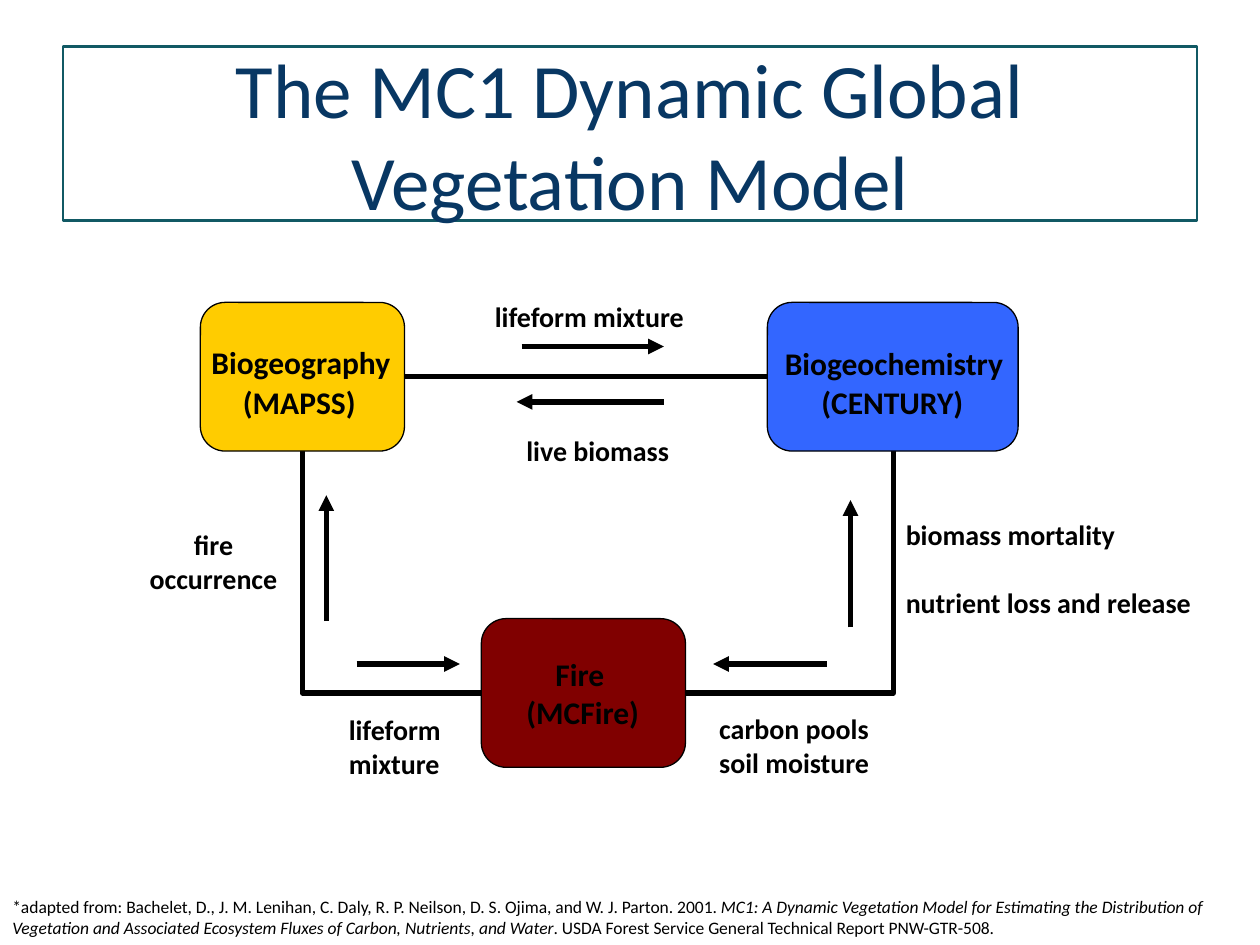
"""Build the MC1 Dynamic Global Vegetation Model slide on a grid of 100 columns by 75 rows."""
from dataclasses import dataclass
from typing import NamedTuple

import pptx
import pptx.dml.color
import pptx.enum.shapes
import pptx.enum.text
import pptx.oxml.ns
import pptx.util
from lxml import etree

ALIGN = pptx.enum.text.PP_ALIGN
SHAPE = pptx.enum.shapes.MSO_SHAPE
CONNECTOR = pptx.enum.shapes.MSO_CONNECTOR


@dataclass(frozen=True)
class Theme:
    font: str = "Calibri"
    ink: str = "000000"
    title_ink: str = "083763"
    title_line: str = "115964"
    yellow: str = "FFCC00"
    blue: str = "3366FF"
    maroon: str = "800000"
    title_size: float = 44
    node_size: float = 18
    label_size: float = 16
    note_size: float = 10
    link_width: float = 3
    node_line: float = 0.75
    title_width: float = 1.5


class Box(NamedTuple):
    col: float
    row: float
    cols: float
    rows: float


class Label(NamedTuple):
    box: Box
    lines: tuple[str, ...]
    align: ALIGN = ALIGN.LEFT
    gap: float = 0


class Node(NamedTuple):
    box: Box
    fill: str
    captions: tuple[Label, Label]


class Link(NamedTuple):
    start: tuple[float, float]
    end: tuple[float, float]
    arrow: bool = True
    bent: bool = False


THEME = Theme()
COLUMNS, ROWS = 100, 75

TITLE = Box(5, 3.7, 90, 13.8)
NOTE = Box(0, 70.6, 100, 4.4)
NOTE_RUNS = (
    ("*adapted from: Bachelet, D., J. M. Lenihan, C. Daly, R. P. Neilson, D. S. Ojima, "
     "and W. J. Parton. 2001. ", False),
    ("MC1: A Dynamic Vegetation Model for Estimating the Distribution of Vegetation and "
     "Associated Ecosystem Fluxes of Carbon, Nutrients, and Water", True),
    (". USDA Forest Service General Technical Report PNW-GTR-508.", False),
)
NODES = (
    Node(Box(15.9, 24, 16.2, 11.8), THEME.yellow,
         (Label(Box(15.8, 26.7, 16.8, 4), ("Biogeography",)),
          Label(Box(18.3, 29.9, 11.3, 4), ("(MAPSS)",)))),
    Node(Box(60.9, 24, 19.9, 11.8), THEME.blue,
         (Label(Box(61.3, 26.8, 19.5, 4), ("Biogeochemistry",)),
          Label(Box(64.2, 29.9, 15.1, 4), ("(CENTURY)",)))),
    Node(Box(38.2, 49.1, 16.2, 11.8), THEME.maroon,
         (Label(Box(43.1, 51.5, 7.5, 4), ("Fire",)),
          Label(Box(40.8, 54.5, 11.7, 4), ("(MCFire)",)))),
)
LABELS = (
    Label(Box(38.3, 23.3, 18, 3.7), ("lifeform mixture",)),
    Label(Box(40.8, 33.9, 14.7, 3.7), ("live biomass",)),
    Label(Box(10.8, 41.4, 12.3, 6.4), ("fire", "occurrence"), ALIGN.CENTER),
    Label(Box(26.7, 56.1, 12.8, 6.4), ("lifeform", "mixture")),
    Label(Box(56.1, 56, 21.8, 6.4), ("carbon pools", "soil moisture")),
    Label(Box(70.9, 40.6, 29.9, 9.1), ("biomass mortality", "nutrient loss and release"), gap=19.5),
)
LINKS = (
    Link((32.1, 29.9), (60.9, 29.9), arrow=False),
    Link((38.2, 55), (24, 35.75), arrow=False, bent=True),
    Link((54.4, 55), (70.9, 35.75), arrow=False, bent=True),
    Link((41.4, 27.5), (52.7, 27.5)),
    Link((52.7, 31.9), (41, 31.9)),
    Link((65.6, 52.7), (56.6, 52.7)),
    Link((28.3, 52.7), (36.5, 52.7)),
    Link((25.9, 49.3), (25.9, 39.3)),
    Link((67.5, 49.8), (67.5, 39.7)),
)

prs = pptx.Presentation()
prs.slide_width, prs.slide_height = pptx.util.Inches(10), pptx.util.Inches(7.5)


def x(cols: float) -> int:
    """Turn columns into a length."""
    return round(prs.slide_width * cols / COLUMNS)


def y(rows: float) -> int:
    """Turn rows into a length."""
    return round(prs.slide_height * rows / ROWS)


def place(box: Box) -> tuple[int, int, int, int]:
    """Turn a grid box into left, top, width and height."""
    return x(box.col), y(box.row), x(box.cols), y(box.rows)


def rgb(value: str) -> pptx.dml.color.RGBColor:
    """Turn a hex value into a colour."""
    return pptx.dml.color.RGBColor.from_string(value)


def add_run(p, text: str, *, size: float, color: str = THEME.ink,
            bold: bool = False, italic: bool = False) -> None:
    """Add formatted text to a paragraph."""
    r = p.add_run()
    r.text = text
    r.font.name, r.font.size = THEME.font, pptx.util.Pt(size)
    r.font.bold, r.font.italic = bold, italic
    r.font.color.rgb = rgb(color)


def add_shape(s, kind: SHAPE, box: Box, *, line: str, width: float, fill: str | None = None):
    """Draw an outlined shape without shadow."""
    sp = s.shapes.add_shape(kind, *place(box))
    sp.shadow.inherit = False
    if fill:
        sp.fill.solid()
        sp.fill.fore_color.rgb = rgb(fill)
    else:
        sp.fill.background()
    sp.line.color.rgb = rgb(line)
    sp.line.width = pptx.util.Pt(width)
    return sp


def add_textbox(s, box: Box):
    """Add a wrapping text box and return its text frame."""
    tf = s.shapes.add_textbox(*place(box)).text_frame
    tf.word_wrap = True
    return tf


def add_label(s, label: Label, size: float) -> None:
    """Write the bold lines of a label."""
    tf = add_textbox(s, label.box)
    for i, line in enumerate(label.lines):
        p = tf.add_paragraph() if i else tf.paragraphs[0]
        p.alignment = label.align
        if i and label.gap:
            p.space_before = pptx.util.Pt(label.gap)
        add_run(p, line, size=size, bold=True)


def add_link(s, link: Link) -> None:
    """Draw a straight or bent connector, with an arrowhead if asked."""
    kind = CONNECTOR.ELBOW if link.bent else CONNECTOR.STRAIGHT
    sp = s.shapes.add_connector(kind, x(link.start[0]), y(link.start[1]), x(link.end[0]), y(link.end[1]))
    sp.line.color.rgb = rgb(THEME.ink)
    sp.line.width = pptx.util.Pt(THEME.link_width)
    qn = pptx.oxml.ns.qn
    props = sp._element.spPr
    if link.bent:
        props.find(qn("a:prstGeom")).set("prst", "bentConnector2")
    if link.arrow:
        etree.SubElement(props.find(qn("a:ln")), qn("a:tailEnd"), type="triangle")
    etree.SubElement(props, qn("a:effectLst"))


def main() -> None:
    """Draw the slide and save it."""
    s = prs.slides.add_slide(prs.slide_layouts[6])
    p = add_textbox(s, NOTE).paragraphs[0]
    for text, italic in NOTE_RUNS:
        add_run(p, text, size=THEME.note_size, italic=italic)
    for link in LINKS:
        add_link(s, link)
    for node in NODES:
        add_shape(s, SHAPE.ROUNDED_RECTANGLE, node.box, fill=node.fill, line=THEME.ink, width=THEME.node_line)
        for caption in node.captions:
            add_label(s, caption, THEME.node_size)
    for label in LABELS:
        add_label(s, label, THEME.label_size)
    tf = add_shape(s, SHAPE.RECTANGLE, TITLE, line=THEME.title_line, width=THEME.title_width).text_frame
    tf.word_wrap = True
    tf.vertical_anchor = pptx.enum.text.MSO_ANCHOR.MIDDLE
    tf.paragraphs[0].alignment = ALIGN.CENTER
    add_run(tf.paragraphs[0], "The MC1 Dynamic Global Vegetation Model",
            size=THEME.title_size, color=THEME.title_ink)
    prs.save("out.pptx")


if __name__ == "__main__":
    main()
